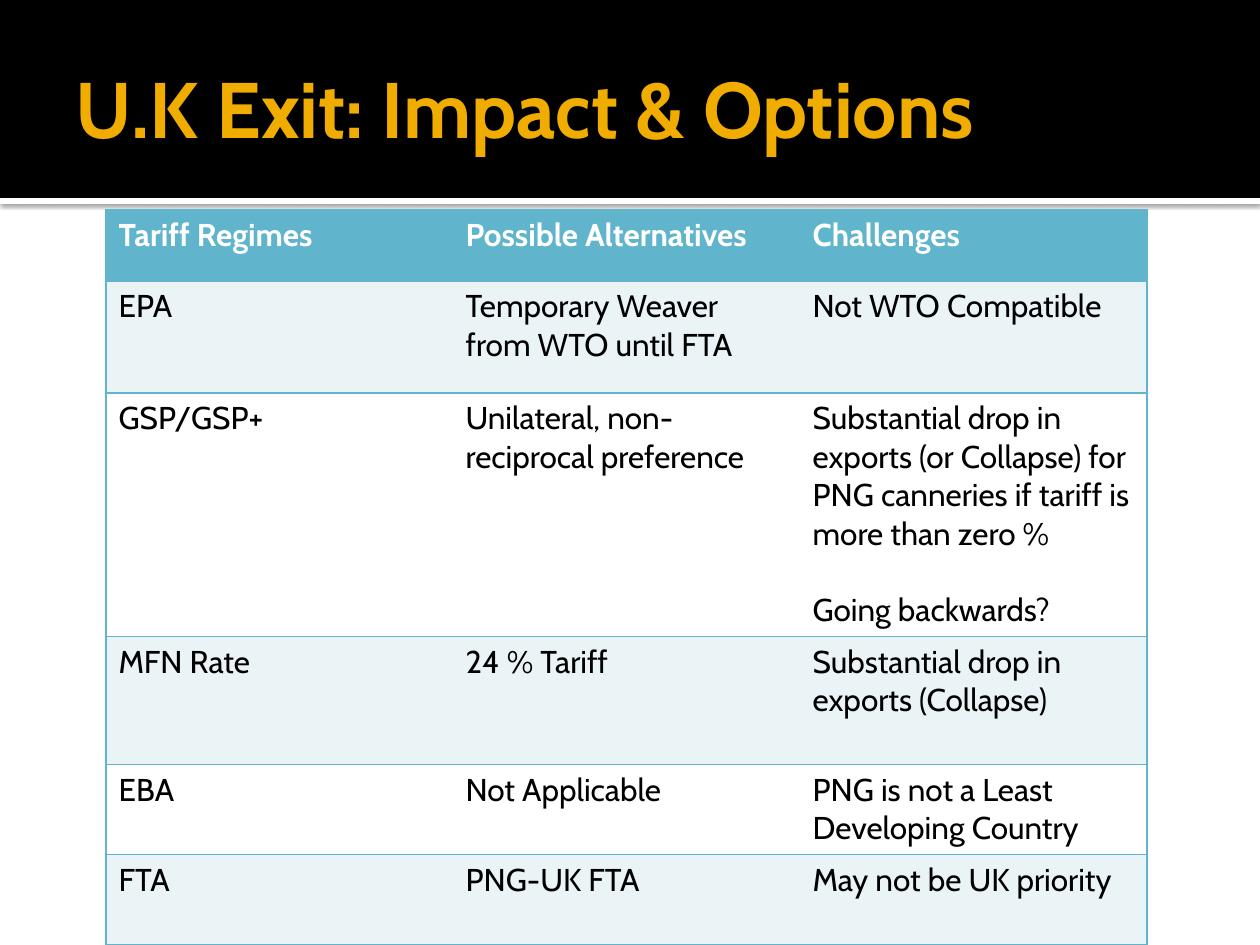
import pptx
import pptx.util
import pptx.dml.color
import pptx.enum.shapes
import pptx.enum.text
import pptx.oxml
import pptx.oxml.ns

SCALE = 914400 / 126  # EMU per px
FONT = "Cabin"
COLORS = {"black": "000000", "white": "FFFFFF", "gold": "F0AD00",
          "teal": "60B5CC", "pale": "EAF3F6"}
NS = pptx.oxml.ns.nsdecls("a")


def px(n):
    return pptx.util.Emu(round(n * SCALE))


def rgb(name):
    return pptx.dml.color.RGBColor.from_string(COLORS[name])


prs = pptx.Presentation()
prs.slide_width, prs.slide_height = px(1260), px(945)
s = prs.slides.add_slide(prs.slide_layouts[5])

# Header: white rule with a shadow, then the black band
for name, top, height in [("white", 198, 6), ("black", 0, 198)]:
    sp = s.shapes.add_shape(pptx.enum.shapes.MSO_SHAPE.RECTANGLE,
                            0, px(top), px(1260), px(height))
    sp.fill.solid()
    sp.fill.fore_color.rgb = rgb(name)
    sp.line.fill.background()
    sp.shadow.inherit = False
    if name == "white":
        effects = sp._element.spPr.find(pptx.oxml.ns.qn("a:effectLst"))
        effects.append(pptx.oxml.parse_xml(
            f'<a:outerShdw {NS} blurRad="31750" dist="10160" dir="5400000" rotWithShape="0">'
            f'<a:srgbClr val="{COLORS["black"]}"><a:alpha val="60000"/></a:srgbClr>'
            '</a:outerShdw>'))

# Title, brought in front of the band
title = s.shapes.title
s.shapes._spTree.append(title._element)
title.left, title.top, title.width, title.height = px(63), px(21), px(1134), px(173)
tf = title.text_frame
tf.text = "U.K Exit: Impact & Options"
tf.word_wrap = True
tf.auto_size = pptx.enum.text.MSO_AUTO_SIZE.NONE
tf.vertical_anchor = pptx.enum.text.MSO_ANCHOR.MIDDLE
tf.margin_left = pptx.util.Inches(0.1)
tf.margin_right = tf.margin_top = tf.margin_bottom = pptx.util.Inches(0.05)
p = tf.paragraphs[0]
p.alignment = pptx.enum.text.PP_ALIGN.LEFT
p.font.name, p.font.size, p.font.bold = FONT, pptx.util.Pt(45), True
p.font.color.rgb = rgb("gold")

# Table of tariff regimes
rows = [
    ("Tariff Regimes", "Possible Alternatives", "Challenges"),
    ("EPA", "Temporary Weaver from WTO until FTA", "Not WTO Compatible"),
    ("GSP/GSP+", "Unilateral, non-reciprocal preference",
     "Substantial drop in exports (or Collapse) for PNG canneries if tariff is "
     "more than zero %\nGoing backwards?"),
    ("MFN Rate", "24 % Tariff", "Substantial drop in exports (Collapse)"),
    ("EBA", "Not Applicable", "PNG is not a Least Developing Country"),
    ("FTA", "PNG-UK FTA", "May not be UK priority"),
]
heights = [71, 112, 243, 128, 90, 90]
table = s.shapes.add_table(len(rows), 3, px(106), px(210),
                           px(3 * 347), px(sum(heights))).table
for col in table.columns:
    col.width = px(347)

for i, (texts, height) in enumerate(zip(rows, heights)):
    table.rows[i].height = px(height)
    fill = "teal" if i == 0 else "pale" if i % 2 else "white"
    for j, text in enumerate(texts):
        cell = table.cell(i, j)
        cell.text = text
        for k, p in enumerate(cell.text_frame.paragraphs):
            p.font.name, p.font.size, p.font.bold = FONT, pptx.util.Pt(18), i == 0
            p.font.color.rgb = rgb("black" if i else "white")
            if k:
                p.space_before = pptx.util.Pt(22)

        # Horizontal rules everywhere, vertical ones on the outer edges only
        tcPr = cell._tc.get_or_add_tcPr()
        visible = {"L": j == 0, "R": j == 2, "T": True, "B": True}
        for side, shown in visible.items():
            paint = (f'<a:solidFill><a:srgbClr val="{COLORS["teal"]}"/></a:solidFill>'
                     if shown else '<a:noFill/>')
            tcPr.append(pptx.oxml.parse_xml(
                f'<a:ln{side} {NS} w="12700">{paint}</a:ln{side}>'))
        cell.fill.solid()
        cell.fill.fore_color.rgb = rgb(fill)

prs.save("out.pptx")
